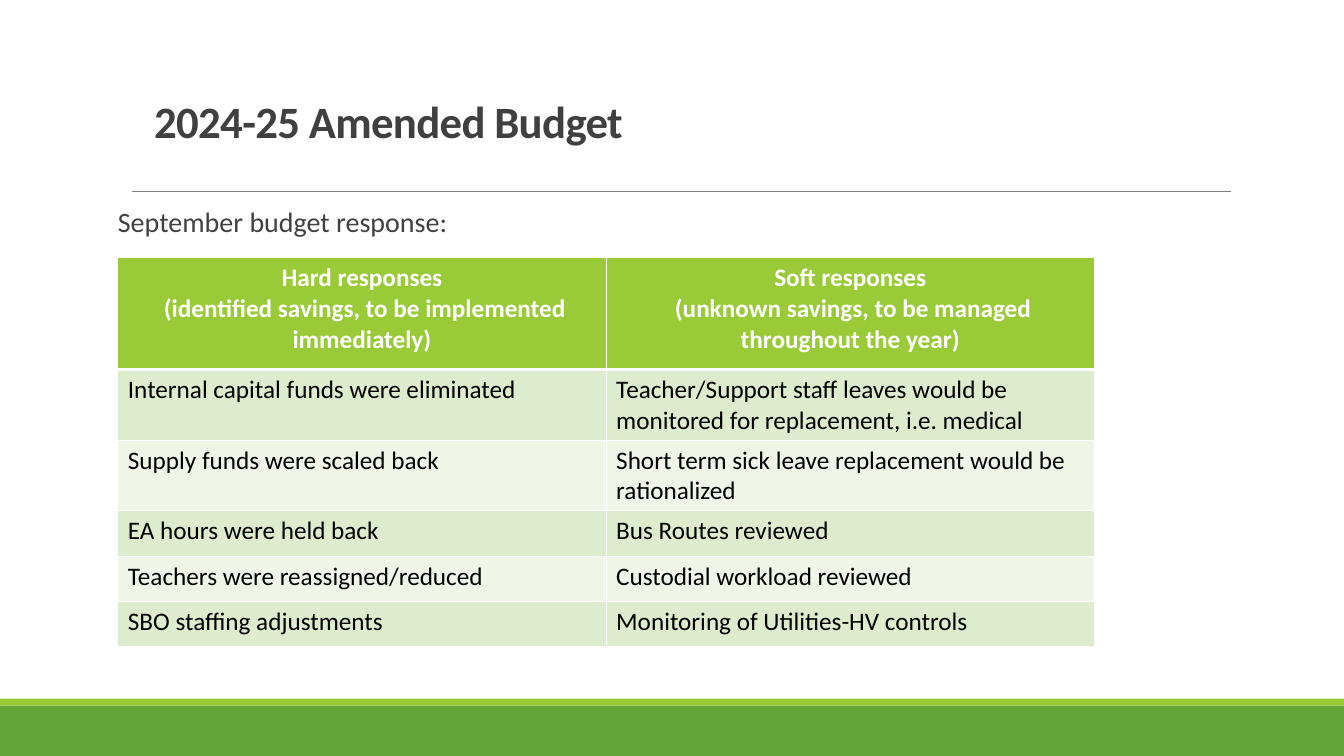
"""Build the amended budget slide with its table of hard and soft responses."""
from dataclasses import dataclass

from lxml.etree import SubElement
from pptx import Presentation
from pptx.dml.color import RGBColor
from pptx.enum.shapes import MSO_CONNECTOR, MSO_SHAPE
from pptx.enum.text import MSO_ANCHOR, PP_ALIGN
from pptx.oxml.ns import qn
from pptx.slide import Slide
from pptx.table import _Cell
from pptx.text.text import _Paragraph
from pptx.util import Pt

FONT = "Calibri"
WHITE, BLACK, DARK_GRAY, GRAY = "FFFFFF", "000000", "404040", "808080"
GREEN, LIME = "63A537", "99CB38"
BAND_COLORS = ("DEECCE", "EFF6E8")
COLUMN_WIDTH = 348.8
HEADER_HEIGHT, ROW_HEIGHT = 80, 32.4
RESPONSES = (
    ("Hard responses\n (identified savings, to be implemented immediately)",
     "Soft responses\n (unknown savings, to be managed throughout the year)"),
    ("Internal capital funds were eliminated",
     "Teacher/Support staff leaves would be monitored for replacement, i.e. medical"),
    ("Supply funds were scaled back",
     "Short term sick leave replacement would be rationalized"),
    ("EA hours were held back", "Bus Routes reviewed"),
    ("Teachers were reassigned/reduced", "Custodial workload reviewed"),
    ("SBO staffing adjustments", "Monitoring of Utilities-HV controls"),
)


@dataclass
class Box:
    left: float
    top: float
    width: float
    height: float

    def lengths(self) -> tuple[Pt, ...]:
        return tuple(Pt(value) for value in (self.left, self.top, self.width, self.height))


@dataclass
class Bar:
    box: Box
    color: str


@dataclass
class Label:
    box: Box
    text: str
    color: str
    font: dict
    paragraph: dict
    frame: dict
    spacing: int = 0


BARS = (
    Bar(Box(0, 504, 960, 36), GREEN),
    Bar(Box(0, 499, 960, 5), LIME),
)
LABELS = (
    Label(Box(103, 49.7, 548.6, 59), "2024-25 Amended Budget", DARK_GRAY,
          {"size": Pt(32), "bold": True}, {"line_spacing": 0.85},
          {"vertical_anchor": MSO_ANCHOR.BOTTOM}, spacing=-50),
    Label(Box(84.2, 145.4, 396, 38.9), "September budget response:", DARK_GRAY,
          {"size": Pt(20)},
          {"line_spacing": 0.9, "space_before": Pt(12), "space_after": Pt(2)},
          {"margin_left": 0, "margin_right": 0}),
)


def rgb(color: str) -> RGBColor:
    return RGBColor.from_string(color)


def apply_format(target: object, values: dict) -> None:
    for name, value in values.items():
        setattr(target, name, value)


def style_paragraph(paragraph: _Paragraph, color: str, font: dict, layout: dict) -> None:
    apply_format(paragraph, layout)
    for run in paragraph.runs:
        apply_format(run.font, {"name": FONT, **font})
        run.font.color.rgb = rgb(color)


def draw_bar(slide: Slide, bar: Bar) -> None:
    shape = slide.shapes.add_shape(MSO_SHAPE.RECTANGLE, *bar.box.lengths())
    shape.shadow.inherit = False
    shape.fill.solid()
    shape.fill.fore_color.rgb = rgb(bar.color)
    shape.line.fill.background()


def draw_rule(slide: Slide) -> None:
    connector = slide.shapes.add_connector(
        MSO_CONNECTOR.STRAIGHT, Pt(94.3), Pt(136.8), Pt(879.1), Pt(136.8))
    connector.line.color.rgb = rgb(GRAY)
    connector.line.width = Pt(0.5)
    SubElement(connector._element.spPr, qn("a:effectLst"))


def draw_label(slide: Slide, label: Label) -> None:
    frame = slide.shapes.add_textbox(*label.box.lengths()).text_frame
    apply_format(frame, {"word_wrap": True, **label.frame})
    frame.text = label.text
    paragraph = frame.paragraphs[0]
    style_paragraph(paragraph, label.color, label.font, label.paragraph)
    if label.spacing:
        paragraph.runs[0].font._element.set("spc", str(label.spacing))


def add_borders(cell: _Cell, widths: dict[str, float]) -> None:
    properties = cell._tc.get_or_add_tcPr()
    for side, width in widths.items():
        line = SubElement(properties, qn(f"a:ln{side}"), w=str(Pt(width)))
        fill = SubElement(line, qn("a:solidFill"))
        SubElement(fill, qn("a:srgbClr"), val=WHITE)


def draw_table(slide: Slide) -> None:
    box = Box(84.2, 184, 2 * COLUMN_WIDTH, HEADER_HEIGHT + 5 * ROW_HEIGHT)
    table = slide.shapes.add_table(len(RESPONSES), 2, *box.lengths()).table
    for column in table.columns:
        column.width = Pt(COLUMN_WIDTH)
    for row_index, texts in enumerate(RESPONSES):
        header = row_index == 0
        table.rows[row_index].height = Pt(HEADER_HEIGHT if header else ROW_HEIGHT)
        fill_color = LIME if header else BAND_COLORS[(row_index - 1) % 2]
        align = PP_ALIGN.CENTER if header else PP_ALIGN.LEFT
        for column_index, text in enumerate(texts):
            cell = table.cell(row_index, column_index)
            add_borders(cell, {"L": 1, "R": 1, "T": 3 if row_index == 1 else 1,
                               "B": 3 if header else 1})
            cell.fill.solid()
            cell.fill.fore_color.rgb = rgb(fill_color)
            cell.text = text
            for paragraph in cell.text_frame.paragraphs:
                style_paragraph(paragraph, WHITE if header else BLACK,
                                {"size": Pt(18), "bold": header}, {"alignment": align})


def main() -> None:
    presentation = Presentation()
    apply_format(presentation, {"slide_width": Pt(960), "slide_height": Pt(540)})
    slide = presentation.slides.add_slide(presentation.slide_layouts[6])
    for bar in BARS:
        draw_bar(slide, bar)
    draw_rule(slide)
    for label in LABELS:
        draw_label(slide, label)
    draw_table(slide)
    presentation.save("out.pptx")


if __name__ == "__main__":
    main()
